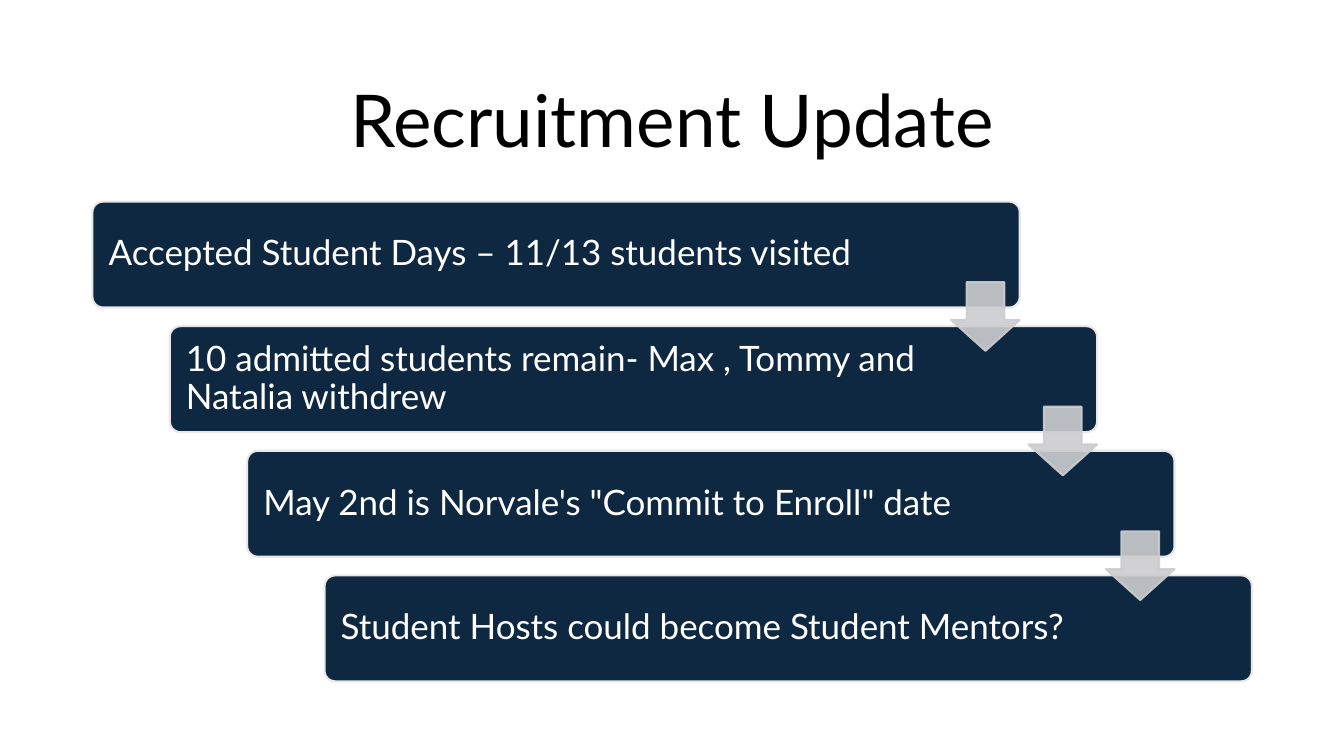
import pptx
import pptx.dml.color
import pptx.enum.shapes
import pptx.enum.text
import pptx.oxml
import pptx.oxml.ns
import pptx.util

Cm = pptx.util.Cm
Pt = pptx.util.Pt
RGBColor = pptx.dml.color.RGBColor
SHAPE = pptx.enum.shapes.MSO_SHAPE
ALIGN = pptx.enum.text.PP_ALIGN

NAVY = RGBColor(0x0E, 0x28, 0x41)
PALE = RGBColor(0xE8, 0xE8, 0xE8)
GREY = RGBColor(0xCC, 0xCD, 0xCF)
WHITE = RGBColor(0xFF, 0xFF, 0xFF)
BLACK = RGBColor(0, 0, 0)

LEFT, TOP = 2.33, 5.08
STEP_X, STEP_Y = 1.95, 3.14
BOX_W, BOX_H = 23.37, 2.67
ARROW_DX, ARROW_DY, ARROW_SIZE = 21.64, 2.03, 1.73

STEPS = [
    "Accepted Student Days – 11/13 students visited",
    "10 admitted students remain- Max , Tommy and Natalia withdrew",
    "May 2nd is Norvale's \"Commit to Enroll\" date",
    "Student Hosts could become Student Mentors?",
]

FRAME_FORMAT = {
    "word_wrap": True,
    "auto_size": pptx.enum.text.MSO_AUTO_SIZE.NONE,
    "vertical_anchor": pptx.enum.text.MSO_ANCHOR.MIDDLE,
}
BOX_MARGINS = {
    "margin_left": Cm(0.33),
    "margin_right": Cm(4),
    "margin_top": Cm(0.33),
    "margin_bottom": Cm(0.33),
}


def apply(target, values):
    for name, value in values.items():
        setattr(target, name, value)


def write_text(sp, text, size, color, align, margins):
    tf = sp.text_frame
    apply(tf, {**FRAME_FORMAT, **margins})
    p = tf.paragraphs[0]
    apply(p, {"alignment": align, "line_spacing": 0.9})
    r = p.add_run()
    r.text = text
    apply(r.font, {"name": "Lato", "size": Pt(size)})
    r.font.color.rgb = color


def add_title(s, text):
    sp = s.shapes.title
    apply(sp, {"left": Cm(2.33), "top": Cm(1.55), "width": Cm(29.21), "height": Cm(3.15)})
    write_text(sp, text, 52, BLACK, ALIGN.CENTER, {})


def add_shape(s, kind, x, y, w, h, adjustments, fill, line):
    sp = s.shapes.add_shape(kind, Cm(x), Cm(y), Cm(w), Cm(h))
    for i, value in enumerate(adjustments):
        sp.adjustments[i] = value
    sp.shadow.inherit = False
    sp.fill.solid()
    sp.fill.fore_color.rgb = fill
    sp.line.color.rgb = line
    sp.line.width = Pt(1.5)
    return sp


def add_step(s, i, text):
    sp = add_shape(s, SHAPE.ROUNDED_RECTANGLE, LEFT + i * STEP_X, TOP + i * STEP_Y,
                   BOX_W, BOX_H, [0.1], NAVY, PALE)
    write_text(sp, text, 25, WHITE, ALIGN.LEFT, BOX_MARGINS)


def add_arrow(s, i):
    sp = add_shape(s, SHAPE.DOWN_ARROW, LEFT + ARROW_DX + i * STEP_X,
                   TOP + ARROW_DY + i * STEP_Y, ARROW_SIZE, ARROW_SIZE,
                   [0.55, 0.45], GREY, GREY)
    for color in sp._element.spPr.iter(pptx.oxml.ns.qn("a:srgbClr")):
        alpha = pptx.oxml.parse_xml(f'<a:alpha {pptx.oxml.ns.nsdecls("a")} val="90000"/>')
        color.append(alpha)


def main():
    prs = pptx.Presentation()
    apply(prs, {"slide_width": Cm(33.87), "slide_height": Cm(19.05)})
    s = prs.slides.add_slide(prs.slide_layouts[5])
    add_title(s, "Recruitment Update")
    for i, text in enumerate(STEPS):
        add_step(s, i, text)
    for i in range(len(STEPS) - 1):
        add_arrow(s, i)
    prs.save("out.pptx")


if __name__ == "__main__":
    main()
